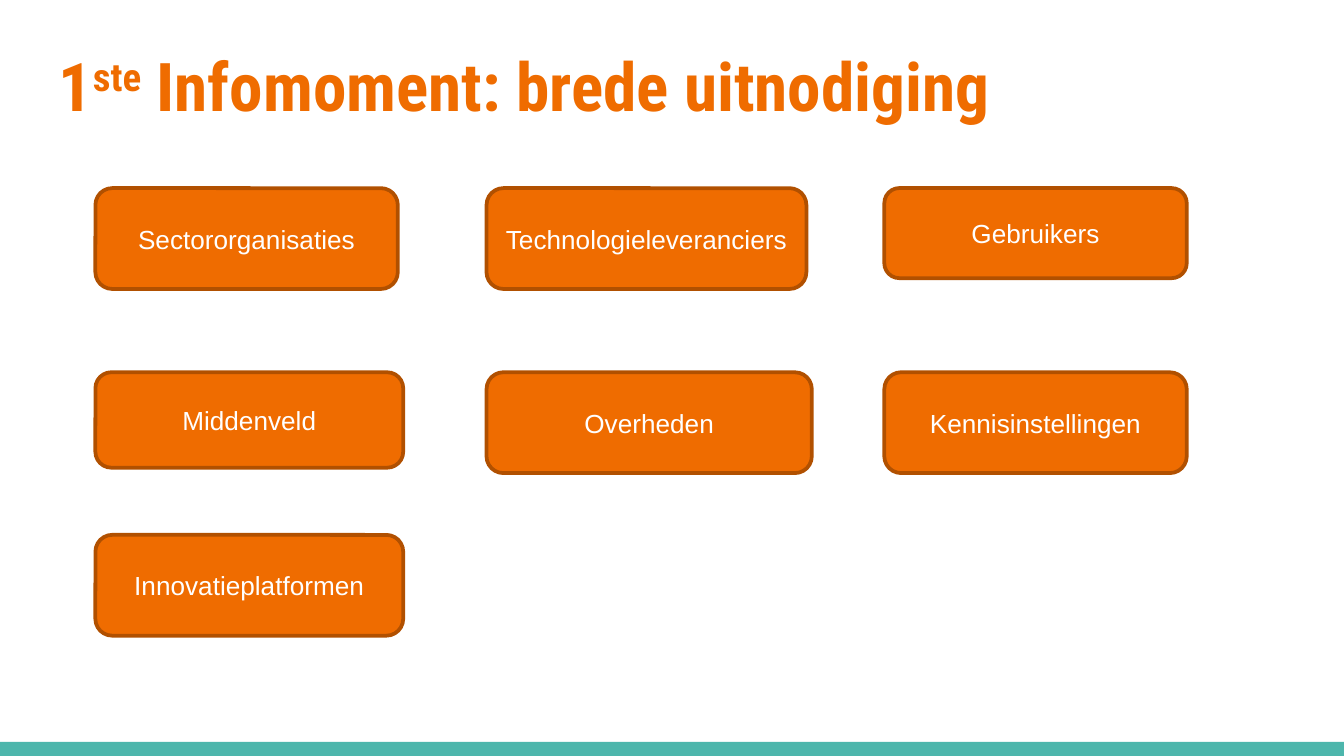
from typing import NamedTuple

from pptx import Presentation
from pptx.dml.color import RGBColor
from pptx.enum.shapes import MSO_SHAPE
from pptx.enum.text import MSO_ANCHOR, PP_ALIGN
from pptx.util import Inches, Pt

RECT = MSO_SHAPE.RECTANGLE
ROUNDED = MSO_SHAPE.ROUNDED_RECTANGLE
TOP, MIDDLE = MSO_ANCHOR.TOP, MSO_ANCHOR.MIDDLE
CENTER = PP_ALIGN.CENTER

COLORS = {"orange": "EF6C00", "border": "B15000", "teal": "4DB6AC", "white": "FFFFFF"}
SLIDE_WIDTH = 10
SLIDE_HEIGHT = SLIDE_WIDTH * 9 / 16
COLUMNS = (0.71, 3.62, 6.58)
ROWS = (1.4, 2.77, 3.98)


class Group(NamedTuple):
    label: str
    column: int
    row: int
    width: float = 2.25
    height: float = 0.75


GROUPS = (
    Group("Overheden", 1, 1, width=2.42),
    Group("Gebruikers", 2, 0, height=0.67),
    Group("Technologieleveranciers", 1, 0, width=2.38),
    Group("Middenveld", 0, 1, width=2.29, height=0.71),
    Group("Sectororganisaties", 0, 0),
    Group("Kennisinstellingen", 2, 1),
    Group("Innovatieplatformen", 0, 2, width=2.29),
)


def rgb(name: str) -> RGBColor:
    return RGBColor.from_string(COLORS[name])


def add_run(p, text: str, font: str, size: float, color: str, bold: bool = False):
    r = p.add_run()
    r.text = text
    r.font.name = font
    r.font.size = Pt(size)
    r.font.bold = bold
    r.font.color.rgb = rgb(color)
    return r


def add_filled(s, kind, left: float, top: float, width: float, height: float, color: str):
    sp = s.shapes.add_shape(kind, Inches(left), Inches(top), Inches(width), Inches(height))
    sp.shadow.inherit = False
    sp.fill.solid()
    sp.fill.fore_color.rgb = rgb(color)
    sp.line.fill.background()
    return sp


def add_title(s) -> None:
    sp = s.shapes.add_textbox(Inches(0.34), Inches(0.23), Inches(9.32), Inches(0.77))
    tf = sp.text_frame
    tf.word_wrap = True
    tf.vertical_anchor = TOP
    tf.margin_left = tf.margin_right = tf.margin_top = tf.margin_bottom = Inches(0.1)
    p = tf.paragraphs[0]
    for text, raised in (("1", False), ("ste", True), (" Infomoment: brede uitnodiging", False)):
        r = add_run(p, text, "Roboto Condensed", 36, "orange", bold=True)
        if raised:
            r.font._element.set("baseline", "30000")


def add_group(s, group: Group) -> None:
    sp = add_filled(s, ROUNDED, COLUMNS[group.column], ROWS[group.row],
                    group.width, group.height, "orange")
    sp.line.color.rgb = rgb("border")
    sp.line.width = Pt(2)
    tf = sp.text_frame
    tf.word_wrap = True
    tf.vertical_anchor = MIDDLE
    p = tf.paragraphs[0]
    p.alignment = CENTER
    add_run(p, group.label, "Arial", 14, "white")


def main() -> None:
    prs = Presentation()
    prs.slide_width, prs.slide_height = Inches(SLIDE_WIDTH), Inches(SLIDE_HEIGHT)
    s = prs.slides.add_slide(prs.slide_layouts[6])
    add_filled(s, RECT, 0, 5.52, SLIDE_WIDTH, SLIDE_HEIGHT - 5.52, "teal")
    add_title(s)
    for group in GROUPS:
        add_group(s, group)
    prs.save("out.pptx")


if __name__ == "__main__":
    main()
